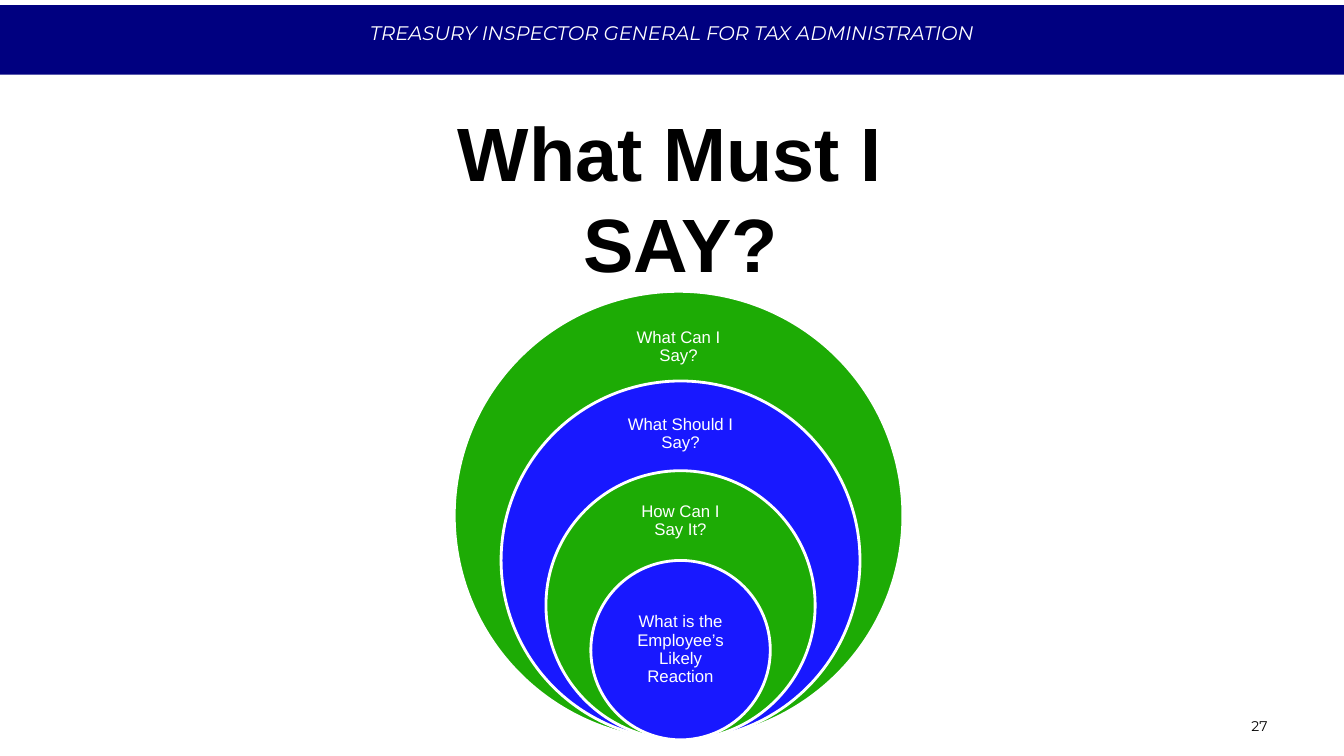
from pptx import Presentation
from pptx.dml.color import RGBColor
from pptx.enum.shapes import MSO_SHAPE
from pptx.enum.text import MSO_ANCHOR, PP_ALIGN
from pptx.util import Inches, Pt

NAVY = RGBColor(0x00, 0x00, 0x80)
GREEN = RGBColor(0x1D, 0xAB, 0x05)
BLUE = RGBColor(0x18, 0x18, 0xFF)
WHITE = RGBColor(0xFF, 0xFF, 0xFF)
BLACK = RGBColor(0x00, 0x00, 0x00)

SLIDE_WIDTH = 13.33
CIRCLES_BOTTOM = 7.34
SMALLEST_DIAMETER = 1.78
DIAMETER_STEP = 0.89

# question, fill, circle centre, label box (left, top, width, height)
QUESTIONS = [
    ("What Can I Say?", GREEN, 6.73, (6.11, 3.11, 1.24, 0.67)),
    ("What Should I Say?", BLUE, 6.75, (6.13, 3.99, 1.24, 0.64)),
    ("How Can I Say It?", GREEN, 6.75, (6.13, 4.87, 1.24, 0.6)),
    ("What is the Employee’s Likely Reaction", BLUE, 6.75, (6.12, 6, 1.26, 0.89)),
]


def add_filled_shape(slide, preset, box, fill):
    shape = slide.shapes.add_shape(preset, *map(Inches, box))
    shape.shadow.inherit = False
    shape.fill.solid()
    shape.fill.fore_color.rgb = fill
    shape.line.fill.background()
    return shape


def set_insets(frame, left, top, right, bottom):
    frame.margin_left, frame.margin_top = Inches(left), Inches(top)
    frame.margin_right, frame.margin_bottom = Inches(right), Inches(bottom)


def write_lines(frame, lines, font_name, size, color, align=PP_ALIGN.CENTER,
                bold=False, italic=False, spacing=None):
    """Write one paragraph, with a line break between the given lines."""
    paragraph = frame.paragraphs[0]
    paragraph.alignment = align
    if spacing is not None:
        paragraph.line_spacing = spacing
    for index, line in enumerate(lines):
        if index:
            paragraph.add_line_break()
        run = paragraph.add_run()
        run.text = line
        run.font.name = font_name
        run.font.size = Pt(size)
        run.font.bold = bold
        run.font.italic = italic
        run.font.color.rgb = color


def add_text_frame(slide, box, anchor):
    frame = slide.shapes.add_textbox(*map(Inches, box)).text_frame
    frame.word_wrap = True
    frame.vertical_anchor = anchor
    return frame


def add_header(slide):
    band = add_filled_shape(slide, MSO_SHAPE.RECTANGLE,
                            (0, 0.05, SLIDE_WIDTH, 0.69), NAVY)
    frame = band.text_frame
    frame.word_wrap = True
    frame.vertical_anchor = MSO_ANCHOR.TOP
    set_insets(frame, 0.1, 0.16, 0.1, 0)
    write_lines(frame, ["TREASURY INSPECTOR GENERAL FOR TAX ADMINISTRATION"],
                "Montserrat", 14, WHITE, italic=True)


def add_title(slide):
    frame = add_text_frame(slide, (2, 1, 9.5, 1.89), MSO_ANCHOR.TOP)
    write_lines(frame, ["What Must I ", "SAY?"], "Arial", 54, BLACK,
                bold=True, spacing=Pt(65))


def add_page_number(slide):
    frame = add_text_frame(slide, (9.56, 6.83, 3.11, 0.5), MSO_ANCHOR.BOTTOM)
    write_lines(frame, ["27"], "Montserrat", 10, BLACK, align=PP_ALIGN.RIGHT)


def add_circle(slide, center, diameter, fill):
    """Add a white-edged circle standing on the common bottom line."""
    box = (center - diameter / 2, CIRCLES_BOTTOM - diameter, diameter, diameter)
    circle = add_filled_shape(slide, MSO_SHAPE.OVAL, box, fill)
    circle.line.color.rgb = WHITE
    circle.line.width = Pt(2)


def add_question_label(slide, question, box):
    frame = add_text_frame(slide, box, MSO_ANCHOR.MIDDLE)
    set_insets(frame, 0.09, 0.09, 0.09, 0.09)
    write_lines(frame, [question], "Arial", 12, WHITE, spacing=0.9)


def add_nested_questions(slide):
    for level, (question, fill, center, label_box) in enumerate(QUESTIONS):
        steps = len(QUESTIONS) - 1 - level
        add_circle(slide, center, SMALLEST_DIAMETER + steps * DIAMETER_STEP, fill)
        add_question_label(slide, question, label_box)


def main():
    presentation = Presentation()
    presentation.slide_width = Inches(SLIDE_WIDTH)
    presentation.slide_height = Inches(7.5)
    slide = presentation.slides.add_slide(presentation.slide_layouts[6])
    add_header(slide)
    add_title(slide)
    add_page_number(slide)
    add_nested_questions(slide)
    presentation.save("out.pptx")


if __name__ == "__main__":
    main()
